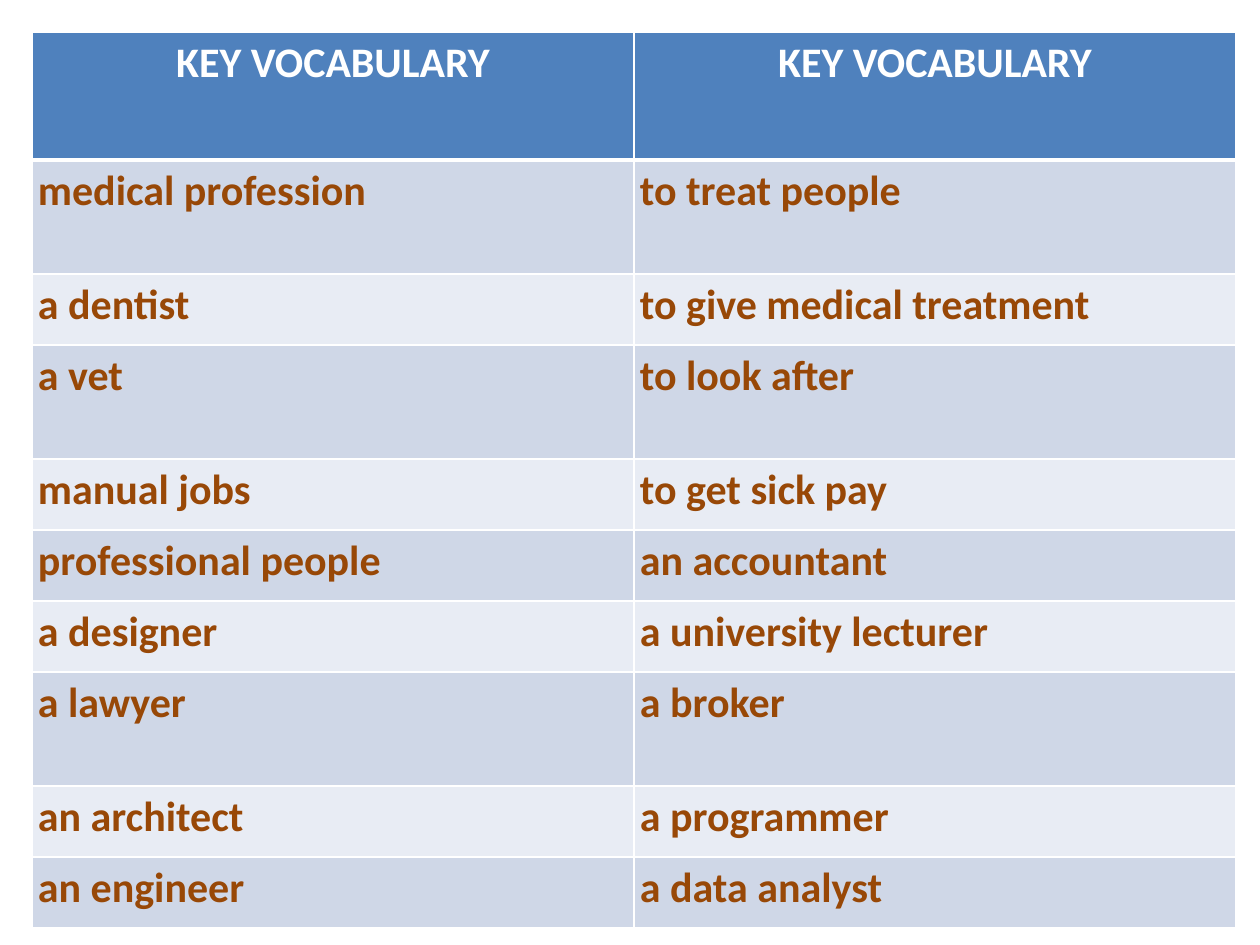
from lxml import etree
from pptx import Presentation
from pptx.dml.color import RGBColor
from pptx.enum.text import PP_ALIGN
from pptx.oxml.ns import qn
from pptx.util import Pt

PX = 914400 // 126
CENTER, LEFT = PP_ALIGN.CENTER, PP_ALIGN.LEFT

TABLE_LEFT = TABLE_TOP = 32
COLUMN_WIDTH = 602
HEADER_HEIGHT, TALL_HEIGHT, SHORT_HEIGHT = 128, 114, 71
TALL_ROWS = {1, 3, 7}
CELL_MARGIN = 6

WHITE, HEADER_BLUE, WORD_BROWN = "FFFFFF", "4F81BD", "984807"
BANDS = ["E8ECF4", "CFD7E7"]

VOCABULARY = [
    ("KEY VOCABULARY", "KEY VOCABULARY"),
    ("medical profession", "to treat people"),
    ("a dentist", "to give medical treatment"),
    ("a vet", "to look after"),
    ("manual jobs", "to get sick pay"),
    ("professional people", "an accountant"),
    ("a designer", "a university lecturer"),
    ("a lawyer", "a broker"),
    ("an architect", "a programmer"),
    ("an engineer", "a data analyst"),
]


def px(length):
    return length * PX


def color(hex_value):
    return RGBColor.from_string(hex_value)


def row_height(row):
    if row == 0:
        return px(HEADER_HEIGHT)
    return px(TALL_HEIGHT if row in TALL_ROWS else SHORT_HEIGHT)


def set_borders(cell, widths):
    """Draw white cell edges; widths maps an edge tag to points."""
    properties = cell._tc.get_or_add_tcPr()
    for edge, width in widths.items():
        line = etree.SubElement(properties, qn(f"a:{edge}"), w=str(Pt(width)))
        fill = etree.SubElement(line, qn("a:solidFill"))
        etree.SubElement(fill, qn("a:srgbClr"), val=WHITE)


def fill_cell(cell, text, row):
    is_header = row == 0
    set_borders(cell, {
        "lnL": 1,
        "lnR": 1,
        "lnT": 3 if row == 1 else 1,
        "lnB": 3 if is_header else 1,
    })
    cell.fill.solid()
    cell.fill.fore_color.rgb = color(HEADER_BLUE if is_header else BANDS[row % 2])
    for side in ("left", "right", "top", "bottom"):
        setattr(cell, f"margin_{side}", px(CELL_MARGIN))

    cell.text = text
    paragraph = cell.text_frame.paragraphs[0]
    paragraph.alignment = CENTER if is_header else LEFT
    font = paragraph.runs[0].font
    for attribute, value in {"name": "Calibri", "size": Pt(24), "bold": True}.items():
        setattr(font, attribute, value)
    font.color.rgb = color(WHITE if is_header else WORD_BROWN)


def add_vocabulary_table(slide):
    heights = [row_height(row) for row in range(len(VOCABULARY))]
    table = slide.shapes.add_table(
        len(VOCABULARY), 2, px(TABLE_LEFT), px(TABLE_TOP),
        px(2 * COLUMN_WIDTH), sum(heights),
    ).table
    for column in table.columns:
        column.width = px(COLUMN_WIDTH)
    for row, (words, height) in enumerate(zip(VOCABULARY, heights)):
        table.rows[row].height = height
        for column, word in enumerate(words):
            fill_cell(table.cell(row, column), word, row)


def main():
    presentation = Presentation()
    presentation.slide_width = px(1260)
    presentation.slide_height = px(945)
    slide = presentation.slides.add_slide(presentation.slide_layouts[6])
    add_vocabulary_table(slide)
    presentation.save("out.pptx")


if __name__ == "__main__":
    main()
